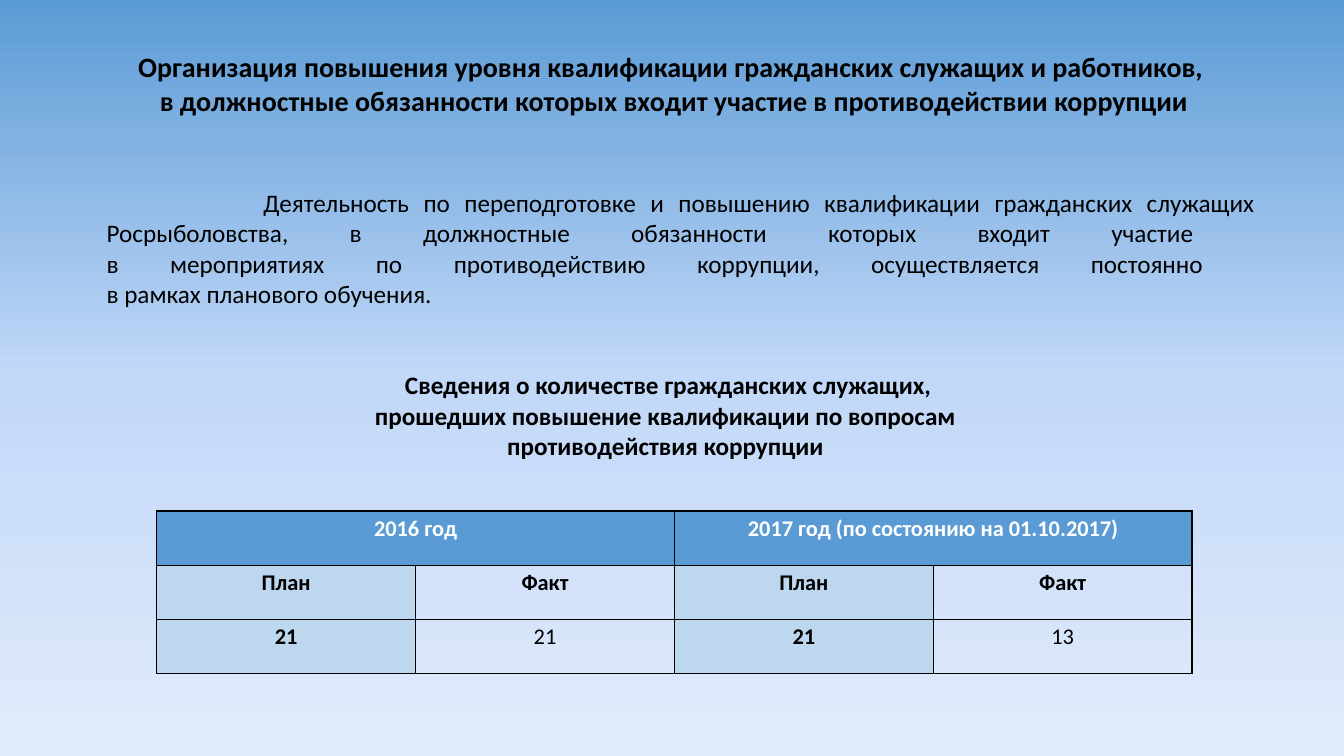
from copy import deepcopy

from lxml import etree
from pptx import Presentation
from pptx.dml.color import RGBColor
from pptx.enum.text import MSO_ANCHOR, MSO_AUTO_SIZE, PP_ALIGN
from pptx.oxml.ns import qn
from pptx.util import Pt

CENTER, JUSTIFY = PP_ALIGN.CENTER, PP_ALIGN.JUSTIFY
TOP, NO_AUTOFIT = MSO_ANCHOR.TOP, MSO_AUTO_SIZE.NONE
TITLE_ONLY = 5
COLORS = {
    "black": "000000",
    "white": "FFFFFF",
    "header": "5B9BD5",
    "plan": "BDD7EE",
    "sky_top": "5B9BD5",
    "sky_middle": "C2D8F8",
    "sky_bottom": "E1EBFB",
}


def write_text(frame, paragraphs, size=18, color="black", bold=False,
               align=CENTER, line_spacing=1.0, first_indent=0):
    frame.word_wrap = True
    frame.vertical_anchor = TOP
    for index, text in enumerate(paragraphs):
        paragraph = frame.paragraphs[0] if index == 0 else frame.add_paragraph()
        paragraph.text = text
        paragraph.alignment = align
        paragraph.line_spacing = line_spacing
        if first_indent:
            paragraph._p.get_or_add_pPr().set("indent", str(Pt(first_indent)))
        for run in paragraph.runs:
            run.font.name = "Calibri"
            run.font.size = Pt(size)
            run.font.bold = bold
            run.font.color.rgb = RGBColor.from_string(COLORS[color])


def add_cell_borders(cell, color="black", width=1):
    properties = cell._tc.get_or_add_tcPr()
    for index, side in enumerate(("a:lnL", "a:lnR", "a:lnT", "a:lnB")):
        line = etree.Element(qn(side), w=str(Pt(width)))
        fill = etree.SubElement(line, qn("a:solidFill"))
        etree.SubElement(fill, qn("a:srgbClr"), val=COLORS[color])
        properties.insert(index, line)


presentation = Presentation()
presentation.slide_width = Pt(960)
presentation.slide_height = Pt(540)
slide = presentation.slides.add_slide(presentation.slide_layouts[TITLE_ONLY])

# Background gradient, top to bottom
background = slide.background.fill
background.gradient()
background.gradient_angle = 270
stop_list = slide.element.find(".//" + qn("a:gsLst"))
stop_list.insert(1, deepcopy(stop_list[0]))
sky = ((0, "sky_top"), (0.5, "sky_middle"), (1, "sky_bottom"))
for stop, (position, name) in zip(background.gradient_stops, sky):
    stop.position = position
    stop.color.rgb = RGBColor.from_string(COLORS[name])

# Title
title = slide.shapes.title
title.left, title.top, title.width, title.height = Pt(28), Pt(31.7), Pt(907), Pt(55.4)
title.text_frame.auto_size = NO_AUTOFIT
write_text(title.text_frame, [
    "Организация повышения уровня квалификации гражданских служащих и работников, ",
    "в должностные обязанности которых входит участие в противодействии коррупции",
], size=20, bold=True)

# Body text and table heading
body = slide.shapes.add_textbox(Pt(69), Pt(130.3), Pt(834.5), Pt(94.3))
write_text(body.text_frame, [
    "Деятельность по переподготовке и повышению квалификации гражданских служащих "
    "Росрыболовства, в должностные обязанности которых входит участие \v"
    "в мероприятиях по противодействию коррупции, осуществляется постоянно \v"
    "в рамках планового обучения.",
], align=JUSTIFY, first_indent=112)

heading = slide.shapes.add_textbox(Pt(137.5), Pt(260.6), Pt(679.7), Pt(72.7))
write_text(heading.text_frame, [
    "Сведения о количестве гражданских служащих,",
    "прошедших повышение квалификации по вопросам \vпротиводействия коррупции ",
], bold=True)

# Table: each year spans a plan column and a fact column
rows = [
    ["2016 год", "", "2017 год (по состоянию на 01.10.2017)", ""],
    ["План", "Факт", "План", "Факт"],
    ["21", "21", "21", "13"],
]
column_width, row_height = 184.9, 38.7
table = slide.shapes.add_table(
    len(rows), len(rows[0]), Pt(112), Pt(365),
    Pt(column_width * len(rows[0])), Pt(row_height * len(rows))).table
table.first_row = table.horz_banding = False

for row_index, values in enumerate(rows):
    for column_index, value in enumerate(values):
        cell = table.cell(row_index, column_index)
        is_header = row_index == 0
        is_plan = column_index % 2 == 0
        if is_header or is_plan:
            cell.fill.solid()
            fill_name = "header" if is_header else "plan"
            cell.fill.fore_color.rgb = RGBColor.from_string(COLORS[fill_name])
        else:
            cell.fill.background()
        add_cell_borders(cell)
        cell.margin_left = cell.margin_right = Pt(5)
        cell.margin_top = cell.margin_bottom = 0
        write_text(cell.text_frame, [value], size=16, line_spacing=1.15,
                   color="white" if is_header else "black",
                   bold=row_index < 2 or is_plan)

for column_index in (0, 2):
    table.cell(0, column_index).merge(table.cell(0, column_index + 1))

presentation.save("out.pptx")
